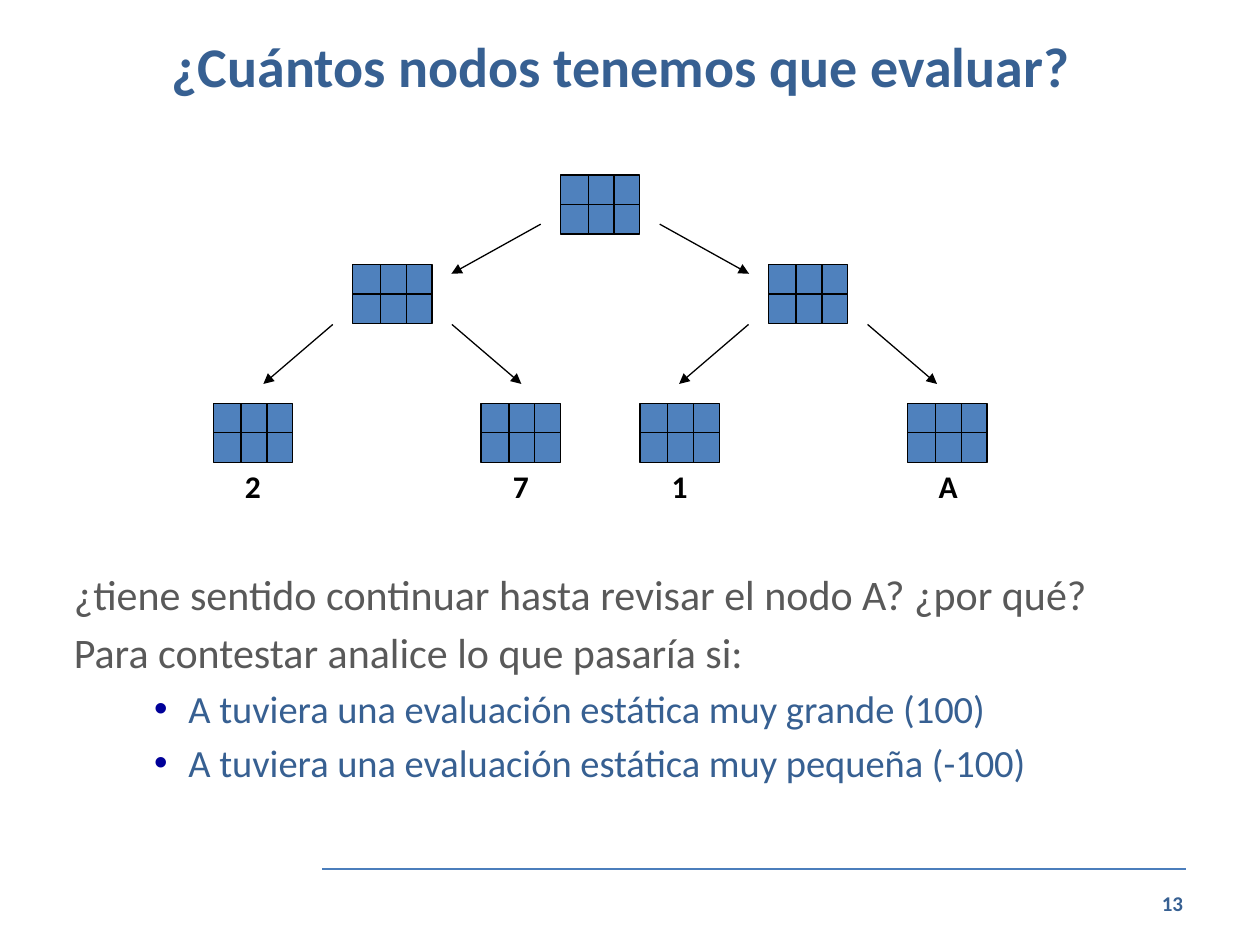
from dataclasses import dataclass

from lxml import etree
from pptx import Presentation
from pptx.dml.color import RGBColor
from pptx.enum.shapes import MSO_CONNECTOR, MSO_SHAPE
from pptx.enum.text import MSO_ANCHOR, PP_ALIGN
from pptx.oxml.ns import qn
from pptx.util import Cm, Pt

STRAIGHT = MSO_CONNECTOR.STRAIGHT
RECTANGLE = MSO_SHAPE.RECTANGLE
TOP, MIDDLE = MSO_ANCHOR.TOP, MSO_ANCHOR.MIDDLE
LEFT, CENTER, RIGHT = PP_ALIGN.LEFT, PP_ALIGN.CENTER, PP_ALIGN.RIGHT
LEFT_SIDE, RIGHT_SIDE = 1, 3

# Node geometry, in centimetres
NODE_WIDTH, NODE_HEIGHT = 1.6, 1.19
COLUMN_OFFSETS = (0.56, 1.08)
ARROW_GAP = 1.2


@dataclass(frozen=True)
class Theme:
    font: str = "Calibri"
    heading: str = "376092"
    body: str = "595959"
    ink: str = "000000"
    node: str = "4F81BD"
    rule: str = "4B7EBC"
    bullet: str = "000099"
    title_size: float = 32
    body_size: float = 24
    bullet_size: float = 22
    label_size: float = 18
    number_size: float = 12
    thin: float = 0.75
    thick: float = 1.5


class SlideBuilder:
    def __init__(self, page, theme):
        self.page = page
        self.theme = theme

    def text_box(self, left, top, width, height, anchor=TOP, wrap=True):
        frame = self.page.shapes.add_textbox(
            Cm(left), Cm(top), Cm(width), Cm(height)).text_frame
        frame.word_wrap = wrap
        frame.vertical_anchor = anchor
        return frame

    def paragraph(self, frame, text, size, color, bold=False, align=LEFT, bullet=False):
        first = not frame.text
        para = frame.paragraphs[0] if first else frame.add_paragraph()
        para.alignment = align
        para.space_before = Pt(0 if first else size * 0.2)
        if bullet:
            self.add_bullet(para)
        para.add_run().text = text
        para.font.name = self.theme.font
        para.font.size = Pt(size)
        para.font.bold = bold
        para.font.color.rgb = RGBColor.from_string(color)

    def add_bullet(self, para):
        properties = para._p.get_or_add_pPr()
        properties.set("marL", str(Cm(2.31)))
        properties.set("indent", str(Cm(-0.69)))
        color = etree.SubElement(properties, qn("a:buClr"))
        etree.SubElement(color, qn("a:srgbClr"), val=self.theme.bullet)
        etree.SubElement(properties, qn("a:buFont"), typeface="Arial")
        etree.SubElement(properties, qn("a:buChar"), char="•")

    def line(self, start, end, color, width, shapes=None, arrow=False):
        connector = (shapes or self.page.shapes).add_connector(
            STRAIGHT, *(Cm(value) for value in (*start, *end)))
        connector.line.color.rgb = RGBColor.from_string(color)
        connector.line.width = Pt(width)
        if arrow:
            etree.SubElement(connector.line._get_or_add_ln(),
                             qn("a:tailEnd"), type="triangle")
        etree.SubElement(connector._element.spPr, qn("a:effectLst"))
        return connector

    def node(self, center, top):
        """A board of three columns and two rows."""
        theme = self.theme
        left, right = center - NODE_WIDTH / 2, center + NODE_WIDTH / 2
        middle, bottom = top + NODE_HEIGHT / 2, top + NODE_HEIGHT
        shapes = self.page.shapes.add_group_shape().shapes
        board = shapes.add_shape(
            RECTANGLE, Cm(left), Cm(top), Cm(NODE_WIDTH), Cm(NODE_HEIGHT))
        board.shadow.inherit = False
        board.fill.solid()
        board.fill.fore_color.rgb = RGBColor.from_string(theme.node)
        board.line.color.rgb = RGBColor.from_string(theme.ink)
        board.line.width = Pt(theme.thin)
        for offset in COLUMN_OFFSETS:
            self.line((left + offset, top), (left + offset, bottom),
                      theme.ink, theme.thin, shapes)
        row = self.line((left, middle), (right, middle), theme.ink, theme.thin, shapes)
        row.begin_connect(board, LEFT_SIDE)
        row.end_connect(board, RIGHT_SIDE)

    def branches(self, center, top, run, drop):
        """A pair of mirrored arrows leading to the two children."""
        for side in (-1, 1):
            start = center + side * ARROW_GAP
            self.line((start, top), (start + side * run, top + drop),
                      self.theme.ink, self.theme.thin, arrow=True)

    def leaf_label(self, center, top, text):
        frame = self.text_box(center - 0.43, top, 0.86, 1.02, wrap=False)
        self.paragraph(frame, text, self.theme.label_size, self.theme.ink,
                       bold=True, align=CENTER)


def main():
    deck = Presentation()
    deck.slide_width, deck.slide_height = Cm(25.4), Cm(19.05)
    theme = Theme()
    builder = SlideBuilder(deck.slides.add_slide(deck.slide_layouts[6]), theme)

    # Footer rule and page number
    builder.line((6.5, 17.52), (23.9, 17.52), theme.rule, theme.thick)
    number = builder.text_box(22.2, 17.7, 1.9, 1.02, MIDDLE)
    builder.paragraph(number, "13", theme.number_size, theme.heading, True, RIGHT)

    # Title
    title = builder.text_box(1.09, 0.33, 22.86, 1.96, MIDDLE)
    builder.paragraph(title, "¿Cuántos nodos tenemos que evaluar?",
                      theme.title_size, theme.heading, True, CENTER)

    # Game tree: root, two inner nodes, four leaves
    root, inner_reach = 12.1, 4.19
    builder.node(root, 3.53)
    builder.branches(root, 4.52, run=1.8, drop=1)
    for center in (root - inner_reach, root + inner_reach):
        builder.node(center, 5.33)
        builder.branches(center, 6.54, run=1.4, drop=1.2)
    for center, value in ((5.1, "2"), (10.5, "7"), (13.7, "1"), (19.1, "A")):
        builder.node(center, 8.13)
        builder.leaf_label(center, 9.3, value)

    # Questions
    body = builder.text_box(1.24, 11.33, 22.86, 4.8)
    for text in ("¿tiene sentido continuar hasta revisar el nodo A? ¿por qué?",
                 "Para contestar analice lo que pasaría si:"):
        builder.paragraph(body, text, theme.body_size, theme.body)
    for text in ("A tuviera una evaluación estática muy grande (100)",
                 "A tuviera una evaluación estática muy pequeña (-100)"):
        builder.paragraph(body, text, theme.bullet_size, theme.heading, bullet=True)

    deck.save("out.pptx")


if __name__ == "__main__":
    main()
